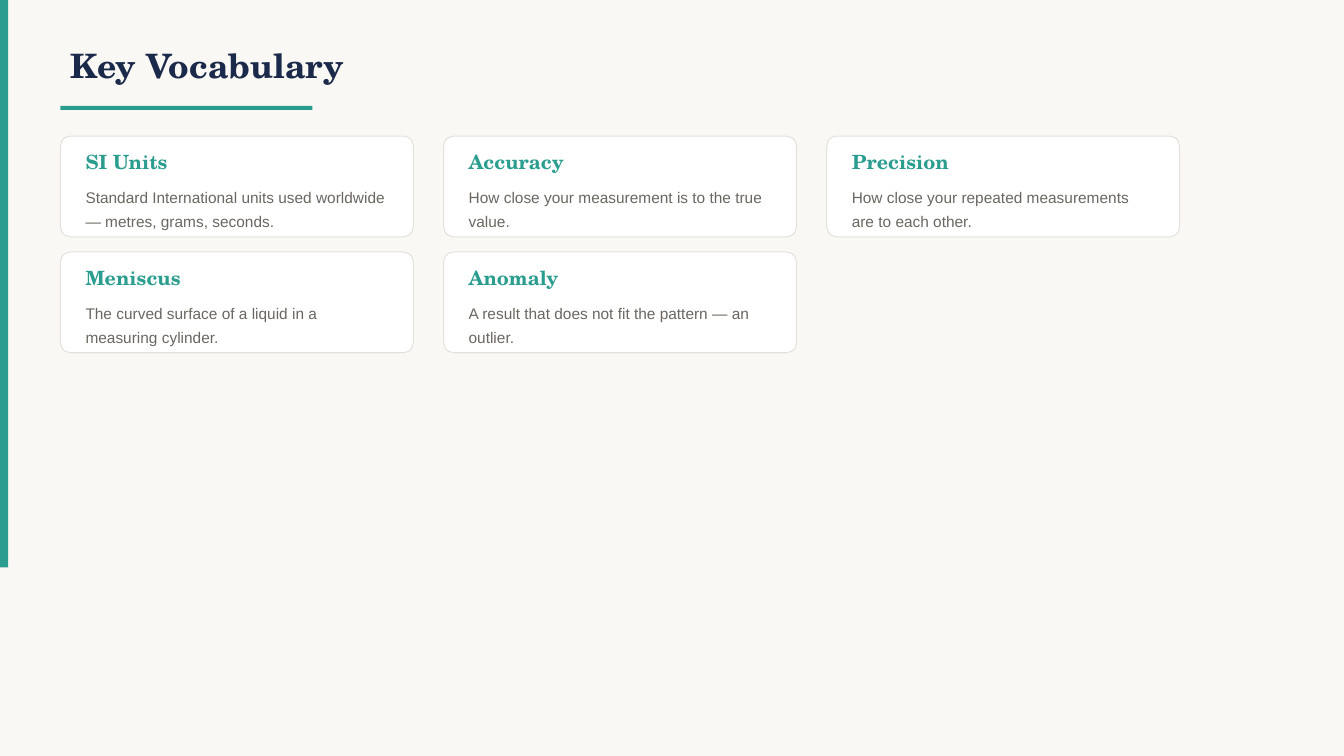
from dataclasses import dataclass

import pptx
import pptx.dml.color
import pptx.enum.shapes
import pptx.enum.text
import pptx.util

Inches = pptx.util.Inches
ShapeKind = pptx.enum.shapes.MSO_SHAPE


@dataclass(frozen=True)
class Theme:
    background: str = "FAF8F5"
    accent: str = "2A9D8F"
    heading: str = "1B2A4A"
    body: str = "6B6660"
    card: str = "FFFFFF"
    border: str = "E5E2DC"
    serif: str = "TeX Gyre Schola"
    sans: str = "Arial"
    title_size: int = 24
    term_size: int = 14
    body_size: int = 11


theme = Theme()


def write_text(shape, text, *, font, size, color, bold=False, line_spacing=None):
    frame = shape.text_frame
    frame.text = text
    frame.word_wrap = True
    frame.auto_size = pptx.enum.text.MSO_AUTO_SIZE.NONE
    frame.vertical_anchor = pptx.enum.text.MSO_ANCHOR.MIDDLE
    paragraph = frame.paragraphs[0]
    paragraph.alignment = pptx.enum.text.PP_ALIGN.LEFT
    paragraph.line_spacing = line_spacing
    run_font = paragraph.runs[0].font
    run_font.name = font
    run_font.size = pptx.util.Pt(size)
    run_font.bold = bold
    run_font.color.rgb = pptx.dml.color.RGBColor.from_string(color)


def add_panel(kind, left, top, width, height, *, fill, border=None):
    """Add a flat filled shape, placed in inches, with an optional thin border."""
    shape = slide.shapes.add_shape(
        kind, Inches(left), Inches(top), Inches(width), Inches(height))
    shape.shadow.inherit = False
    shape.fill.solid()
    shape.fill.fore_color.rgb = pptx.dml.color.RGBColor.from_string(fill)
    if border:
        shape.line.color.rgb = pptx.dml.color.RGBColor.from_string(border)
        shape.line.width = pptx.util.Pt(0.75)
    else:
        shape.line.fill.background()
    return shape


presentation = pptx.Presentation()
presentation.slide_width = Inches(13.33)
presentation.slide_height = Inches(7.5)
slide = presentation.slides.add_slide(
    presentation.slide_layouts.get_by_name("Title Only"))
slide.background.fill.solid()
slide.background.fill.fore_color.rgb = pptx.dml.color.RGBColor.from_string(
    theme.background)

# Heading and accents
margin = 0.6
title = slide.shapes.title
title.left, title.top = Inches(margin), Inches(0.3)
title.width, title.height = Inches(10), Inches(0.7)
write_text(title, "Key Vocabulary", font=theme.serif, size=theme.title_size,
           color=theme.heading, bold=True)
add_panel(ShapeKind.RECTANGLE, 0, 0, 0.08, 5.63, fill=theme.accent)
add_panel(ShapeKind.RECTANGLE, margin, 1.05, 2.5, 0.04, fill=theme.accent)

# Vocabulary cards
vocabulary = [
    ("SI Units", "Standard International units used worldwide — metres, grams, seconds."),
    ("Accuracy", "How close your measurement is to the true value."),
    ("Precision", "How close your repeated measurements are to each other."),
    ("Meniscus", "The curved surface of a liquid in a measuring cylinder."),
    ("Anomaly", "A result that does not fit the pattern — an outlier."),
]
columns = 3
card_width, card_height = 3.5, 1
column_gap, row_gap = 0.3, 0.15
grid_top = 1.35
padding = 0.15

for index, (term, definition) in enumerate(vocabulary):
    row, column = divmod(index, columns)
    left = margin + column * (card_width + column_gap)
    top = grid_top + row * (card_height + row_gap)
    card = add_panel(ShapeKind.ROUNDED_RECTANGLE, left, top, card_width, card_height,
                     fill=theme.card, border=theme.border)
    card.adjustments[0] = 0.1

    text_left = Inches(left + padding)
    text_width = Inches(card_width - 2 * padding)
    term_box = slide.shapes.add_textbox(
        text_left, Inches(top + 0.08), text_width, Inches(0.35))
    write_text(term_box, term, font=theme.serif, size=theme.term_size,
               color=theme.accent, bold=True)
    definition_box = slide.shapes.add_textbox(
        text_left, Inches(top + 0.45), text_width, Inches(0.5))
    write_text(definition_box, definition, font=theme.sans, size=theme.body_size,
               color=theme.body, line_spacing=1.3)

presentation.save("out.pptx")
